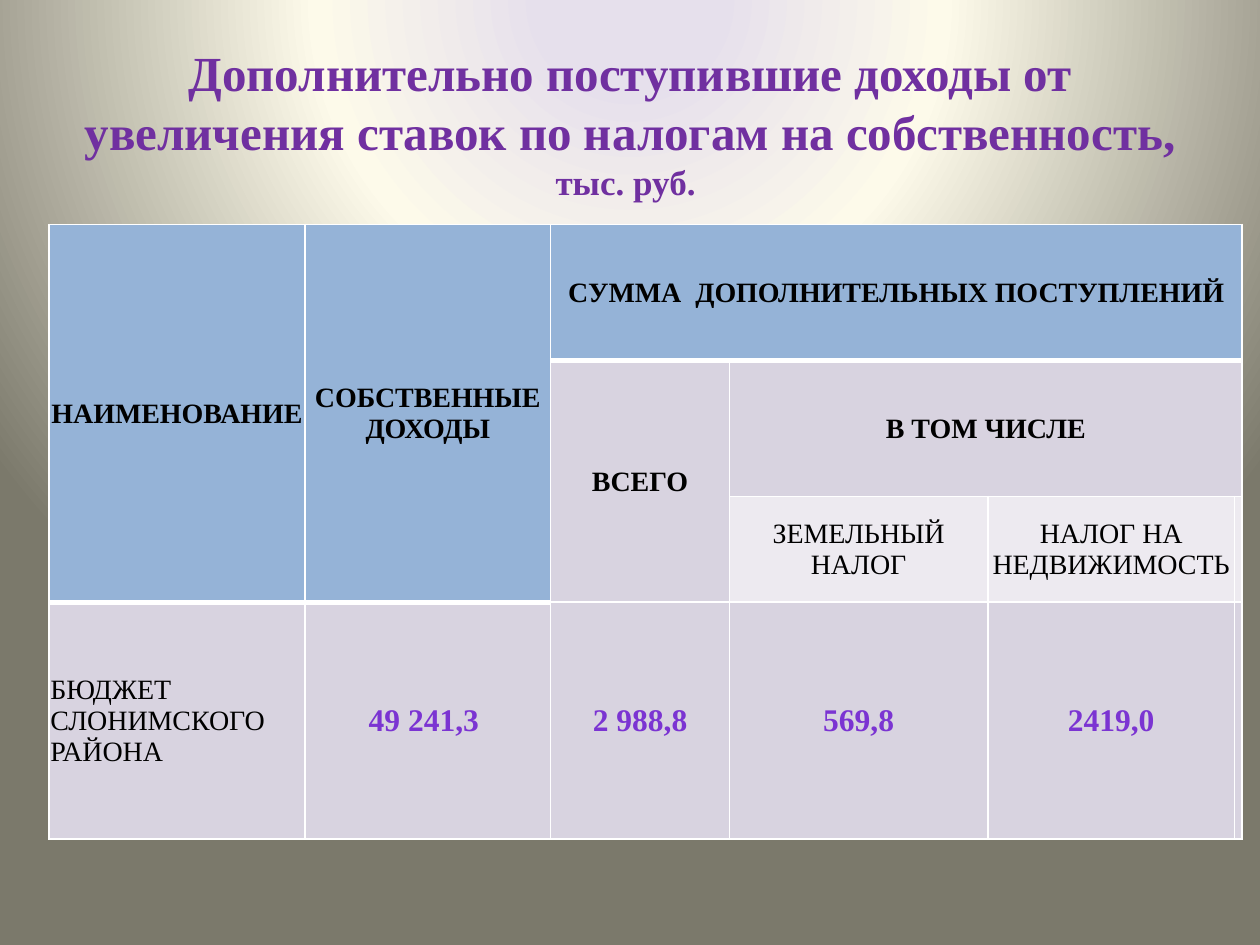
import pptx
import pptx.util
import pptx.dml.color
import pptx.enum.text
import pptx.oxml
from dataclasses import dataclass

Inches, Pt = pptx.util.Inches, pptx.util.Pt
Rgb = pptx.dml.color.RGBColor.from_string
Align = pptx.enum.text.PP_ALIGN
Middle = pptx.enum.text.MSO_ANCHOR.MIDDLE
NS = ('xmlns:a="http://schemas.openxmlformats.org/drawingml/2006/main" '
      'xmlns:p="http://schemas.openxmlformats.org/presentationml/2006/main"')


@dataclass(frozen=True)
class Theme:
    face: str = "Times New Roman"
    title: str = "7030A0"
    text: str = "000000"
    edge: str = "FFFFFF"
    rim: str = "5E457C"
    head: str = "95B3D7"
    band: str = "D8D3E0"
    pale: str = "EDEAF0"
    back: tuple = ((11, "E6E0EC"), (40, "FDFAEA"), (100, "7B796B"))
    glow: tuple = ((0, "3D1B67"), (43, "7B34D2"), (48, "7330C4"), (100, "3D1B67"))
    big: int = 28
    unit: int = 20
    label: int = 16
    sum: int = 18
    thin: int = 1
    thick: int = 3


@dataclass(frozen=True)
class Part:
    row: int
    col: int
    text: str
    fill: str
    rows: int = 1
    cols: int = 1
    bold: bool = True
    value: bool = False
    align: Align = Align.CENTER


T = Theme()
COLS = (2.03, 1.95, 1.42, 2.05, 1.96, 0.04)
ROWS = (1.08, 1.08, 0.84, 1.88)
PARTS = (
    Part(0, 0, "НАИМЕНОВАНИЕ", T.head, rows=3),
    Part(0, 1, "СОБСТВЕННЫЕ ДОХОДЫ", T.head, rows=3),
    Part(0, 2, "СУММА  ДОПОЛНИТЕЛЬНЫХ ПОСТУПЛЕНИЙ", T.head, cols=4),
    Part(1, 2, "ВСЕГО", T.band, rows=2),
    Part(1, 3, "В ТОМ ЧИСЛЕ", T.band, cols=3),
    Part(2, 3, "ЗЕМЕЛЬНЫЙ НАЛОГ", T.pale, bold=False),
    Part(2, 4, "НАЛОГ НА НЕДВИЖИМОСТЬ", T.pale, bold=False),
    Part(2, 5, "", T.pale),
    Part(3, 0, "БЮДЖЕТ СЛОНИМСКОГО РАЙОНА", T.band, bold=False, align=Align.LEFT),
    Part(3, 1, "49 241,3 ", T.band, value=True),
    Part(3, 2, "2 988,8", T.band, value=True),
    Part(3, 3, "569,8", T.band, value=True),
    Part(3, 4, "2419,0", T.band, value=True),
    Part(3, 5, "", T.band),
)


def solid(color: str) -> str:
    return f'<a:solidFill><a:srgbClr val="{color}"/></a:solidFill>'


def blend(stops: tuple, shape: str) -> str:
    marks = "".join(f'<a:gs pos="{at * 1000}"><a:srgbClr val="{color}"/></a:gs>'
                    for at, color in stops)
    return f'<a:gradFill {NS} rotWithShape="1"><a:gsLst>{marks}</a:gsLst>{shape}</a:gradFill>'


def paint(slide) -> None:
    shape = ('<a:path path="circle"><a:fillToRect l="50000" t="-80000" '
             'r="50000" b="180000"/></a:path>')
    back = pptx.oxml.parse_xml(
        f'<p:bg {NS}><p:bgPr>{blend(T.back, shape)}<a:effectLst/></p:bgPr></p:bg>')
    slide.element.cSld.insert(0, back)


def write(para, text: str, size: int, color: str, bold: bool = True):
    run = para.add_run()
    run.text = text
    font = run.font
    font.name, font.size, font.bold = T.face, Pt(size), bold
    font.color.rgb = Rgb(color)
    return run


def border(cell, top: int, base: int) -> None:
    props = cell._tc.get_or_add_tcPr()
    sides = (("L", T.thin), ("R", T.thin), ("T", top), ("B", base))
    for spot, (side, width) in enumerate(sides):
        line = f'<a:ln{side} {NS} w="{Pt(width)}">{solid(T.edge)}</a:ln{side}>'
        props.insert(spot, pptx.oxml.parse_xml(line))


def letter(para, part: Part) -> None:
    run = write(para, part.text, T.sum if part.value else T.label,
                T.text, part.bold)
    props = run.font._element
    if part.value:
        props.replace(props[0], pptx.oxml.parse_xml(
            blend(T.glow, '<a:lin ang="5400000" scaled="0"/>')))
    rim = f'<a:ln {NS} w="{Pt(0.71)}">{solid(T.rim)}</a:ln>'
    props.insert(0, pptx.oxml.parse_xml(rim))


def place(table, part: Part) -> None:
    first = table.cell(part.row, part.col)
    for row in range(part.row, part.row + part.rows):
        for col in range(part.col, part.col + part.cols):
            cell = table.cell(row, col)
            cell.fill.solid()
            cell.fill.fore_color.rgb = Rgb(part.fill)
            # A thick rule runs under the blue heads
            depth = 3 if col < 2 else 1
            border(cell, T.thick if row == depth else T.thin,
                   T.thick if part.fill == T.head else T.thin)
    if part.rows * part.cols > 1:
        first.merge(table.cell(part.row + part.rows - 1, part.col + part.cols - 1))
    first.vertical_anchor = Middle
    first.margin_left = first.margin_right = first.margin_top = Inches(0.01)
    first.margin_bottom = 0
    para = first.text_frame.paragraphs[0]
    para.alignment = part.align
    if part.text:
        letter(para, part)


def main() -> None:
    deck = pptx.Presentation()
    deck.slide_width, deck.slide_height = Inches(10), Inches(7.5)
    slide = deck.slides.add_slide(deck.slide_layouts[5])
    paint(slide)

    # Title
    title = slide.shapes.title
    title.left, title.top = Inches(0.5), Inches(0.23)
    title.width, title.height = Inches(9), Inches(1.48)
    title.text_frame.vertical_anchor = Middle
    para = title.text_frame.paragraphs[0]
    para.alignment = Align.CENTER
    write(para, "Дополнительно поступившие доходы от увеличения ставок "
                "по налогам на собственность, ", T.big, T.title)
    write(para, "тыс. руб. ", T.unit, T.title)

    # Table of extra income
    frame = slide.shapes.add_table(len(ROWS), len(COLS), Inches(0.39), Inches(1.78),
                                   Inches(sum(COLS)), Inches(sum(ROWS)))
    table = frame.table
    table.first_row = table.horz_banding = False
    for col, width in zip(table.columns, COLS):
        col.width = Inches(width)
    for row, height in zip(table.rows, ROWS):
        row.height = Inches(height)
    for part in PARTS:
        place(table, part)

    deck.save("out.pptx")


if __name__ == "__main__":
    main()
